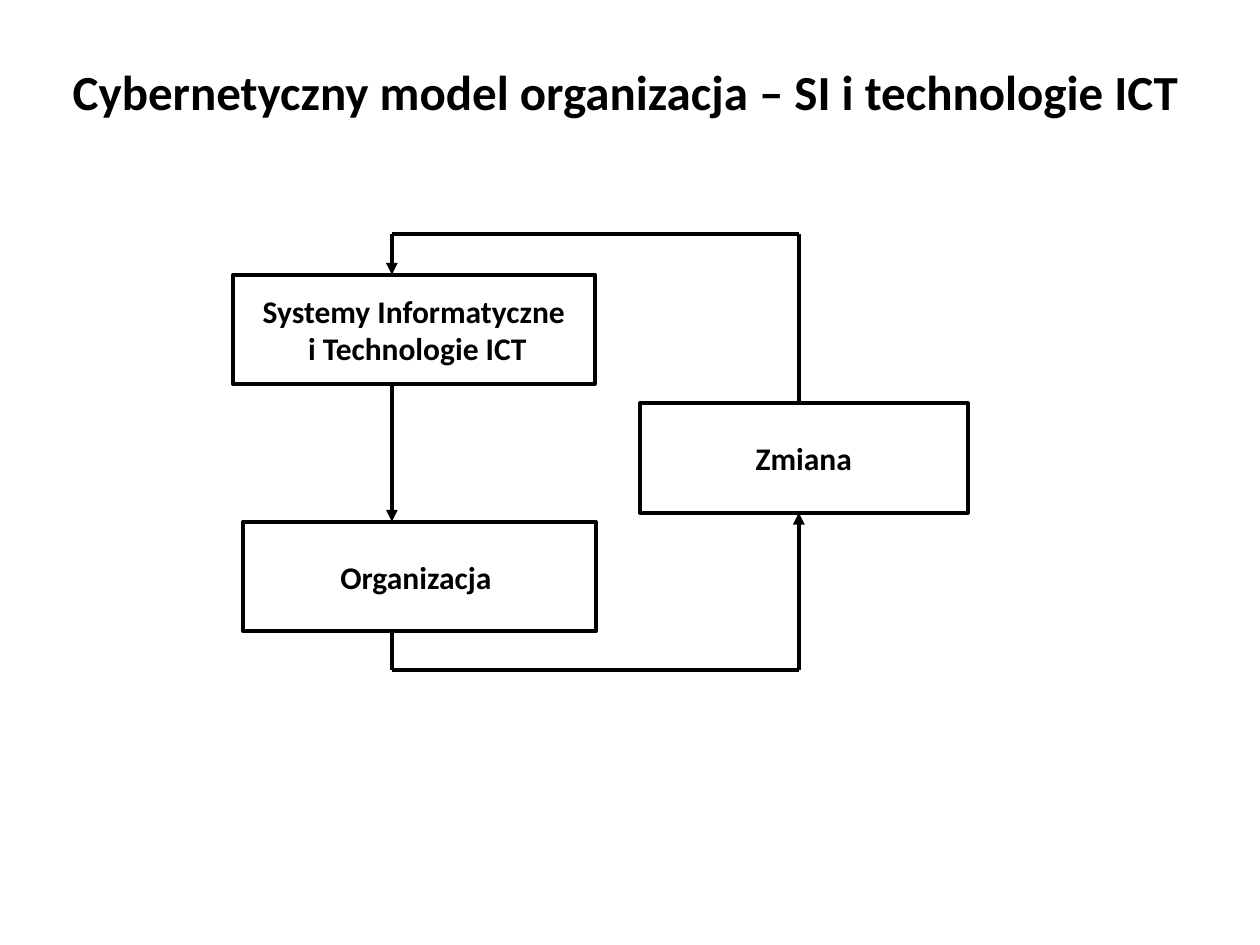
from dataclasses import dataclass

import pptx
import pptx.dml.color
import pptx.enum.shapes
import pptx.enum.text
import pptx.oxml.ns
import pptx.util
from lxml import etree

Inches = pptx.util.Inches
Pt = pptx.util.Pt
qn = pptx.oxml.ns.qn

BLACK = "000000"
WHITE = "FFFFFF"
LINE_WIDTH = 2.25
BOX_HEIGHT = 0.87
LEFT_X, RIGHT_X = 3.11, 6.34
TOP_Y, BOTTOM_Y = 1.86, 5.32


@dataclass
class Box:
    left: float
    top: float
    width: float
    lines: list[str]

    @property
    def bottom(self) -> float:
        return self.top + BOX_HEIGHT


@dataclass
class Link:
    start: tuple[float, float]
    end: tuple[float, float]
    arrow: bool = False


def color(value: str) -> pptx.dml.color.RGBColor:
    return pptx.dml.color.RGBColor.from_string(value)


def write(tf, lines: list[str], size: float) -> None:
    for i, line in enumerate(lines):
        p = tf.paragraphs[0] if i == 0 else tf.add_paragraph()
        p.text = line
        p.alignment = pptx.enum.text.PP_ALIGN.CENTER
        p.font.name = "Calibri"
        p.font.size = Pt(size)
        p.font.bold = True
        p.font.color.rgb = color(BLACK)


def set_line(line) -> None:
    line.color.rgb = color(BLACK)
    line.width = Pt(LINE_WIDTH)


def add_box(s, box: Box) -> None:
    sp = s.shapes.add_shape(
        pptx.enum.shapes.MSO_SHAPE.RECTANGLE,
        Inches(box.left), Inches(box.top), Inches(box.width), Inches(BOX_HEIGHT),
    )
    sp.shadow.inherit = False
    sp.fill.solid()
    sp.fill.fore_color.rgb = color(WHITE)
    set_line(sp.line)
    tf = sp.text_frame
    tf.word_wrap = False
    tf.vertical_anchor = pptx.enum.text.MSO_ANCHOR.MIDDLE
    write(tf, box.lines, 18)


def add_link(s, link: Link) -> None:
    cxn = s.shapes.add_connector(
        pptx.enum.shapes.MSO_CONNECTOR.STRAIGHT,
        *(Inches(v) for v in link.start + link.end),
    )
    set_line(cxn.line)
    if link.arrow:
        ln = cxn.line._get_or_add_ln()
        etree.SubElement(ln, qn("a:tailEnd"), type="triangle")
    etree.SubElement(cxn._element.spPr, qn("a:effectLst"))


def add_title(s, text: str) -> None:
    sp = s.shapes.add_textbox(Inches(0.2), Inches(0.44), Inches(9.61), Inches(0.57))
    tf = sp.text_frame
    tf.word_wrap = True
    tf.auto_size = pptx.enum.text.MSO_AUTO_SIZE.SHAPE_TO_FIT_TEXT
    write(tf, [text], 28)


def main() -> None:
    prs = pptx.Presentation()
    prs.slide_width = Inches(10)
    prs.slide_height = Inches(7.5)
    s = prs.slides.add_slide(prs.slide_layouts[6])

    systems = Box(1.85, 2.18, 2.87, ["Systemy Informatyczne", " i Technologie ICT"])
    organization = Box(1.93, 4.14, 2.8, ["Organizacja "])
    change = Box(5.08, 3.2, 2.6, ["Zmiana"])
    for box in (systems, organization, change):
        add_box(s, box)

    links = [
        Link((LEFT_X, systems.bottom), (LEFT_X, organization.top), True),
        Link((LEFT_X, organization.bottom), (LEFT_X, BOTTOM_Y)),
        Link((LEFT_X, BOTTOM_Y), (RIGHT_X, BOTTOM_Y)),
        Link((LEFT_X, TOP_Y), (RIGHT_X, TOP_Y)),
        Link((LEFT_X, TOP_Y), (LEFT_X, systems.top), True),
        Link((RIGHT_X, BOTTOM_Y), (RIGHT_X, change.bottom), True),
        Link((RIGHT_X, change.top), (RIGHT_X, TOP_Y)),
    ]
    for link in links:
        add_link(s, link)

    add_title(s, "Cybernetyczny model organizacja – SI i technologie ICT ")
    prs.save("out.pptx")


if __name__ == "__main__":
    main()
